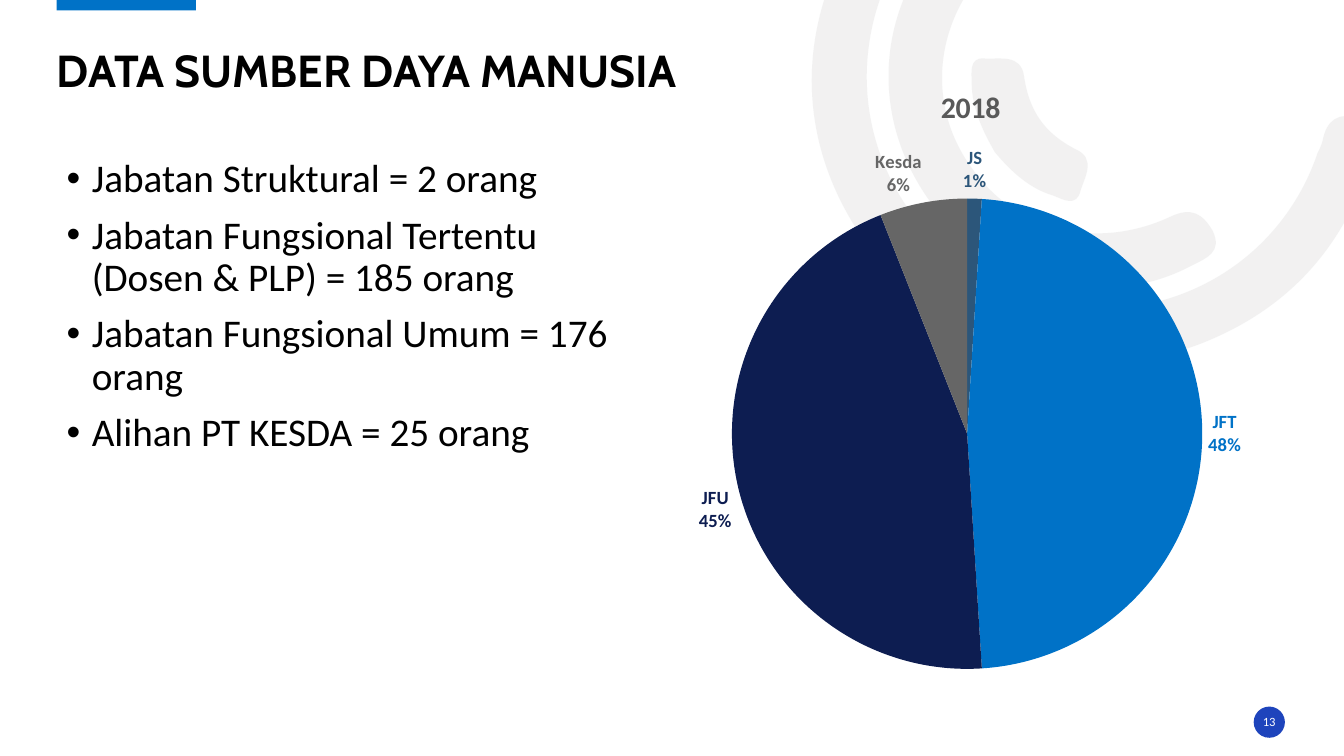
import math
from collections import namedtuple
from dataclasses import dataclass

from lxml import etree
from pptx import Presentation
from pptx import util as u
from pptx.chart import data
from pptx.dml.color import RGBColor
from pptx.enum import chart as charts, shapes, text
from pptx.oxml import ns

Box = namedtuple("Box", "left top width height")


@dataclass(frozen=True)
class Theme:
    """Colours, fonts and type sizes of the slide."""
    ink: str = "000000"
    paper: str = "FFFFFF"
    accent: str = "0072C7"
    badge: str = "1E44BC"
    ring: str = "E7E6E6"
    ring_alpha: int = 53000
    chart_title: str = "595959"
    slices: tuple = ("2C567A", "0072C7", "0D1D51", "666666")
    heading_font: str = "Cabin"
    body_font: str = "Calibri"
    heading: float = 32
    body: float = 28
    chart_heading: float = 21.3
    label: float = 13.3
    number: float = 9


THEME = Theme()
RING_UNIT = 0.72
RING_TURN = 144.2
RINGS = (
    (Box(585.4, -145.4, 349.2, 432), (851, 229),
     (799, 149, 787, 50, 838, -50), (890, -152, 976, -203, 1090, -207),
     (1105, -207, 1121, -210, 1131, -195), (1144, -175, 1127, -154, 1098, -154),
     (967, -154, 865, -59, 860, 68), (856, 181, 936, 281, 1046, 302),
     (1160, 324, 1270, 261, 1307, 152), (1309, 148, 1311, 144, 1312, 140),
     (1316, 119, 1327, 111, 1349, 117), (1373, 124, 1367, 141, 1361, 156),
     (1334, 245, 1278, 307, 1191, 341), (1070, 387, 936, 345, 851, 229)),
    (Box(648.7, -56.2, 153.4, 306.7), (922, 199),
     (862, 115, 869, 7, 940, -68), (951, -79, 962, -95, 980, -78),
     (995, -64, 997, -50, 979, -32), (925, 26, 920, 108, 965, 168),
     (1008, 229, 1088, 249, 1161, 215), (1182, 205, 1193, 212, 1203, 229),
     (1213, 250, 1197, 256, 1183, 263), (1096, 310, 983, 282, 922, 199)),
    (Box(705.6, 26.6, 56.2, 131.8), (987, 151),
     (975, 130, 964, 107, 964, 82), (964, 73, 961, 57, 976, 58),
     (992, 59, 1013, 53, 1016, 76), (1021, 110, 1036, 132, 1067, 148),
     (1088, 157, 1076, 176, 1072, 189), (1068, 206, 1055, 198, 1045, 194),
     (1021, 187, 1003, 170, 987, 151)),
)
STAFF = (
    "Jabatan Struktural = 2 orang",
    "Jabatan Fungsional Tertentu (Dosen & PLP) = 185 orang",
    "Jabatan Fungsional Umum = 176 orang",
    "Alihan PT KESDA = 25 orang",
)
SHARES = {"JS": 1, "JFT": 48, "JFU": 45, "Kesda": 6}


def points(box):
    """Turn a box in points into lengths."""
    return [u.Pt(length) for length in box]


def style(font, size, color, name=THEME.body_font, bold=False):
    """Set the look of a font."""
    font.size, font.name, font.bold = u.Pt(size), name, bold
    font.color.rgb = RGBColor.from_string(color)


def paint(shape, color):
    """Give a shape a flat fill without line or shadow."""
    shape.shadow.inherit = False
    shape.fill.solid()
    shape.fill.fore_color.rgb = RGBColor.from_string(color)
    shape.line.fill.background()


def clear_insets(frame):
    """Remove the inner margins of a text frame."""
    frame.margin_left = frame.margin_right = frame.margin_top = frame.margin_bottom = 0


def unturn(box, x, y):
    """Give the place inside the unrotated box of a point on the page."""
    angle = math.radians(RING_TURN)
    dx = x * RING_UNIT - box.left - box.width / 2
    dy = y * RING_UNIT - box.top - box.height / 2
    return (u.Pt(box.width / 2 + dx * math.cos(angle) + dy * math.sin(angle)),
            u.Pt(box.height / 2 - dx * math.sin(angle) + dy * math.cos(angle)))


def add_ring(page, box, start, *bends):
    """Draw one translucent ring segment of the background."""
    builder = page.shapes.build_freeform(*unturn(box, *start))
    builder.add_line_segments([unturn(box, *bend[4:]) for bend in bends], close=True)
    ring = builder.convert_to_shape()
    ring.left, ring.top, ring.width, ring.height = points(box)
    ring.rotation = RING_TURN
    outline = ring._element.find(".//" + ns.qn("a:path"))
    outline.set("w", str(ring.width))
    outline.set("h", str(ring.height))
    origin = outline.find(ns.qn("a:moveTo")).find(ns.qn("a:pt"))
    for key, value in zip("xy", unturn(box, *start)):
        origin.set(key, str(value))
    for line, bend in zip(outline.findall(ns.qn("a:lnTo")), bends):
        cubic = etree.Element(ns.qn("a:cubicBezTo"))
        for index in (0, 2, 4):
            x, y = unturn(box, *bend[index:index + 2])
            etree.SubElement(cubic, ns.qn("a:pt"), x=str(x), y=str(y))
        outline.replace(line, cubic)
    paint(ring, THEME.ring)
    color = ring.fill._xPr.find(".//" + ns.qn("a:srgbClr"))
    etree.SubElement(color, ns.qn("a:alpha"), val=str(THEME.ring_alpha))


def add_title(page, box, words):
    """Place the title at the foot of its box."""
    title = page.shapes.title
    title.left, title.top, title.width, title.height = points(box)
    frame = title.text_frame
    clear_insets(frame)
    frame.vertical_anchor = text.MSO_ANCHOR.BOTTOM
    para = frame.paragraphs[0]
    para.alignment, para.line_spacing = text.PP_ALIGN.LEFT, 0.9
    span = para.add_run()
    span.text = words
    style(span.font, THEME.heading, THEME.ink, THEME.heading_font, True)


def add_bullets(page, box, lines):
    """List the lines as bullets in the box."""
    frame = page.shapes.add_textbox(*points(box)).text_frame
    frame.word_wrap = True
    for index, line in enumerate(lines):
        para = frame.add_paragraph() if index else frame.paragraphs[0]
        para.line_spacing = 0.9
        para.space_before = u.Pt(10 if index else 0)
        props = para._p.get_or_add_pPr()
        props.set("marL", str(u.Pt(18)))
        props.set("indent", str(-u.Pt(18)))
        etree.SubElement(props, ns.qn("a:buFont"), typeface="Arial")
        etree.SubElement(props, ns.qn("a:buChar"), char="•")
        span = para.add_run()
        span.text = line
        style(span.font, THEME.body, THEME.ink)


def set_layout(parent, **fractions):
    """Fix the place of a chart part by fractions of the chart."""
    layout = parent.find(ns.qn("c:layout"))
    if layout is None:
        layout = etree.Element(ns.qn("c:layout"))
        parent.insert(0, layout)
    manual = etree.SubElement(layout, ns.qn("c:manualLayout"))
    if "w" in fractions:
        etree.SubElement(manual, ns.qn("c:layoutTarget"), val="inner")
    for axis in "xy":
        etree.SubElement(manual, ns.qn(f"c:{axis}Mode"), val="edge")
    for key, value in fractions.items():
        etree.SubElement(manual, ns.qn(f"c:{key}"), val=str(value))


def label_slice(point, color):
    """Colour a slice and label it with its category and percentage."""
    point.format.fill.solid()
    point.format.fill.fore_color.rgb = RGBColor.from_string(color)
    label = point.data_label
    style(label.font, THEME.label, color, bold=True)
    label.position = charts.XL_LABEL_POSITION.OUTSIDE_END
    node = label._dLbl
    for flag, shown in (("showVal", "0"), ("showCatName", "1"), ("showPercent", "1")):
        node.find(ns.qn("c:" + flag)).set("val", shown)
    etree.SubElement(node, ns.qn("c:separator")).text = "\n"


def add_pie(page, box, name, shares):
    """Draw the pie chart of staff shares."""
    table = data.CategoryChartData()
    table.categories = list(shares)
    table.add_series(name, list(shares.values()))
    chart = page.shapes.add_chart(charts.XL_CHART_TYPE.PIE, *points(box), table).chart
    style(chart.font, 10, THEME.ink)
    chart.has_legend = False
    chart.has_title = True
    span = chart.chart_title.text_frame.paragraphs[0].add_run()
    span.text = name
    style(span.font, THEME.chart_heading, THEME.chart_title, bold=True)
    plot = chart.plots[0]
    plot.vary_by_categories = True
    series = plot.series[0]
    for index, color in enumerate(THEME.slices):
        label_slice(series.points[index], color)
    labels = series.data_labels
    labels.show_value, labels.show_category_name, labels.show_percentage = False, True, True
    labels.position = charts.XL_LABEL_POSITION.OUTSIDE_END
    set_layout(chart._chartSpace.find(".//" + ns.qn("c:plotArea")), x=0.13, y=0.22, w=0.74, h=0.76)
    set_layout(chart.chart_title._element, x=0.45, y=0.03)


def add_page_number(page, box, number):
    """Put the page number on a round badge."""
    paint(page.shapes.add_shape(shapes.MSO_SHAPE.OVAL, *points(box)), THEME.badge)
    area = Box(box.left - 0.5, box.top + 3.8, box.width + 1, 14.4)
    frame = page.shapes.add_textbox(*points(area)).text_frame
    clear_insets(frame)
    frame.word_wrap = True
    frame.vertical_anchor = text.MSO_ANCHOR.MIDDLE
    para = frame.paragraphs[0]
    para.alignment = text.PP_ALIGN.CENTER
    span = para.add_run()
    span.text = number
    style(span.font, THEME.number, THEME.paper)


def build_staff_slide(deck):
    """Compose the staff slide."""
    page = deck.slides.add_slide(deck.slide_layouts[5])
    for ring in RINGS:
        add_ring(page, *ring)
    tab = Box(40.5, -1.5, 99.5, 9)
    paint(page.shapes.add_shape(shapes.MSO_SHAPE.RECTANGLE, *points(tab)), THEME.accent)
    add_page_number(page, Box(895.5, 504.7, 22.3, 22.3), "13")
    add_bullets(page, Box(40.5, 110, 433.4, 376.6), STAFF)
    add_pie(page, Box(463.7, 44.6, 454.3, 442.1), "2018", SHARES)
    add_title(page, Box(40.5, 20, 877.7, 49.7), "DATA SUMBER DAYA MANUSIA")


def main():
    """Build and save the deck."""
    deck = Presentation()
    deck.slide_width, deck.slide_height = u.Pt(960), u.Pt(540)
    build_staff_slide(deck)
    deck.save("out.pptx")


if __name__ == "__main__":
    main()
